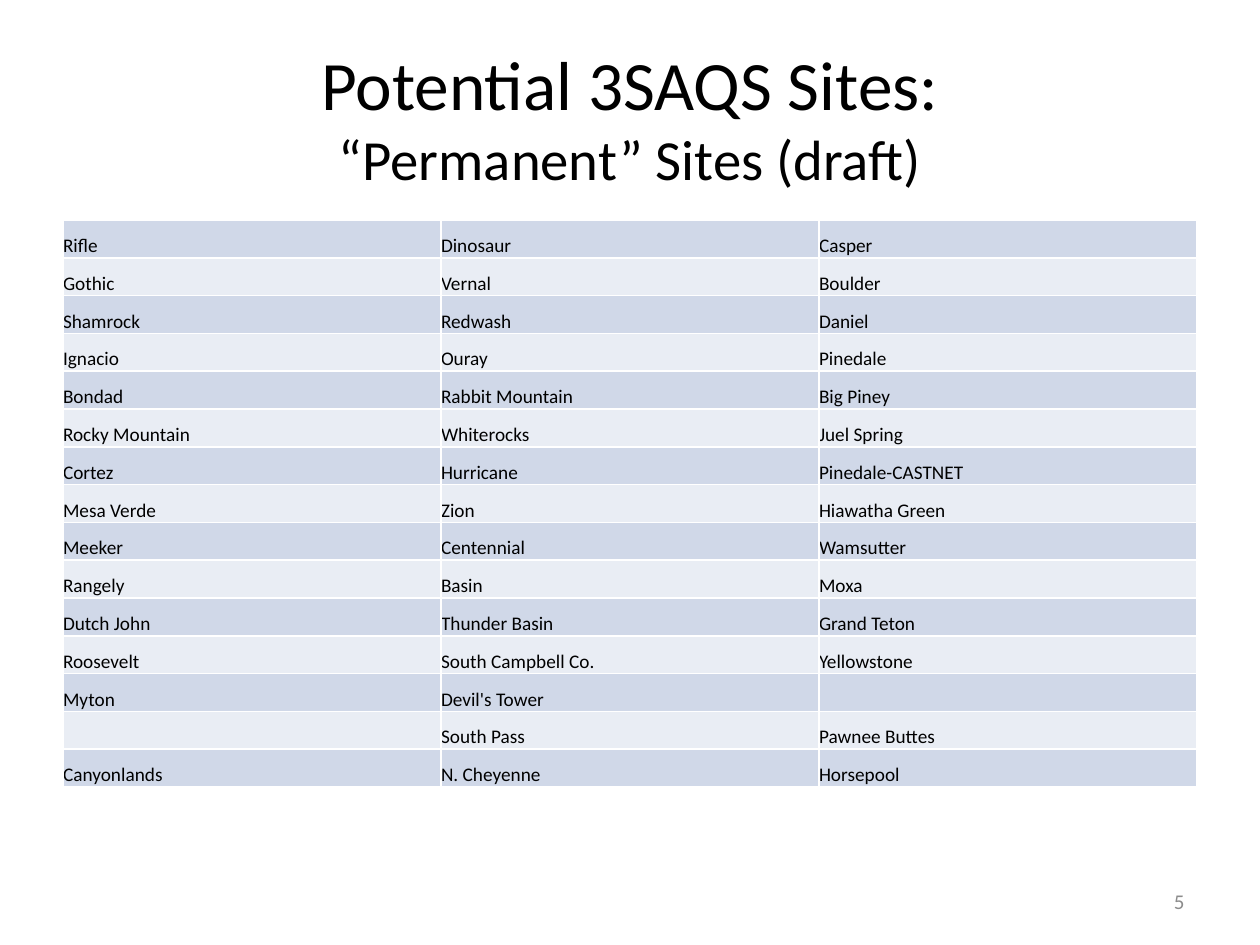
from lxml.etree import SubElement
from pptx import Presentation
from pptx.dml.color import RGBColor
from pptx.enum.text import MSO_ANCHOR as Anchor, MSO_AUTO_SIZE as AutoSize, PP_ALIGN as Align
from pptx.oxml.ns import qn
from pptx.util import Emu, Pt

PX_PER_INCH = 126
FONT = "Calibri"
BLACK, WHITE, GREY = "000000", "FFFFFF", "8C8C8C"
BANDS = ("D0D8E8", "E9EDF4")
CELL_SIZE = 11
SITES = [
    ("Rifle", "Dinosaur", "Casper"),
    ("Gothic", "Vernal", "Boulder"),
    ("Shamrock", "Redwash", "Daniel"),
    ("Ignacio", "Ouray", "Pinedale"),
    ("Bondad", "Rabbit Mountain", "Big Piney"),
    ("Rocky Mountain", "Whiterocks", "Juel Spring"),
    ("Cortez", "Hurricane", "Pinedale-CASTNET"),
    ("Mesa Verde", "Zion", "Hiawatha Green"),
    ("Meeker", "Centennial", "Wamsutter"),
    ("Rangely", "Basin", "Moxa"),
    ("Dutch John", "Thunder Basin", "Grand Teton"),
    ("Roosevelt", "South Campbell Co.", "Yellowstone"),
    ("Myton", "Devil's Tower", ""),
    ("", "South Pass", "Pawnee Buttes"),
    ("Canyonlands", "N. Cheyenne", "Horsepool"),
]


def px(length):
    """Turn pixels into EMU."""
    return Emu(round(length * 914400 / PX_PER_INCH))


def color(code):
    """Turn a hex string into a colour."""
    return RGBColor.from_string(code)


def style(paragraph, code, size=None, align=None):
    """Set the font and alignment of a whole paragraph."""
    paragraph.alignment = align
    paragraph.font.name = FONT
    paragraph.font.color.rgb = color(code)
    if size:
        paragraph.font.size = Pt(size)


def add_title(slide, heading, subheading):
    """Fill the title placeholder with a large line and a smaller one."""
    title = slide.shapes.title
    title.left, title.top, title.width, title.height = map(px, (63, 38, 1134, 157))
    frame = title.text_frame
    frame.auto_size = AutoSize.NONE
    frame.vertical_anchor = Anchor.MIDDLE
    lines = frame.paragraphs[0]
    style(lines, BLACK, align=Align.CENTER)
    first = lines.add_run()
    first.text, first.font.size = heading, Pt(39.6)
    lines.add_line_break()
    second = lines.add_run()
    second.text, second.font.size = subheading, Pt(32.4)


def add_page_number(slide, number):
    """Place the page number at the lower right."""
    frame = slide.shapes.add_textbox(*map(px, (903, 876, 294, 50))).text_frame
    frame.word_wrap = True
    frame.vertical_anchor = Anchor.MIDDLE
    frame.text = number
    style(frame.paragraphs[0], GREY, 12, Align.RIGHT)


def add_borders(cell, code, width):
    """Draw all four borders of a cell."""
    properties = cell._tc.get_or_add_tcPr()
    for side in ("lnL", "lnR", "lnT", "lnB"):
        line = SubElement(properties, qn(f"a:{side}"), w=str(Pt(width)))
        SubElement(SubElement(line, qn("a:solidFill")), qn("a:srgbClr"), val=code)


def fill_cell(cell, site, band):
    """Write and format one site name."""
    cell.text = site
    cell.margin_left = cell.margin_right = cell.margin_top = cell.margin_bottom = 0
    cell.vertical_anchor = Anchor.BOTTOM
    add_borders(cell, WHITE, 1)
    cell.fill.solid()
    cell.fill.fore_color.rgb = color(band)
    name = cell.text_frame.paragraphs[0]
    style(name, BLACK, CELL_SIZE)
    if not site:
        SubElement(name._p, qn("a:endParaRPr"), sz=str(CELL_SIZE * 100))


def add_site_table(slide, sites):
    """Build the banded table of sites."""
    frame = slide.shapes.add_table(len(sites), len(sites[0]), *map(px, (63, 220, 1134, 567)))
    table = frame.table
    table.first_row = table.horz_banding = False
    for row, names in enumerate(sites):
        for column, site in enumerate(names):
            fill_cell(table.cell(row, column), site, BANDS[row % 2])


def main():
    """Build and save the slide."""
    deck = Presentation()
    deck.slide_width, deck.slide_height = px(1260), px(945)
    slide = deck.slides.add_slide(deck.slide_layouts.get_by_name("Title Only"))
    add_title(slide, "Potential 3SAQS Sites:", "“Permanent” Sites (draft)")
    add_page_number(slide, "5")
    add_site_table(slide, SITES)
    deck.save("out.pptx")


if __name__ == "__main__":
    main()
